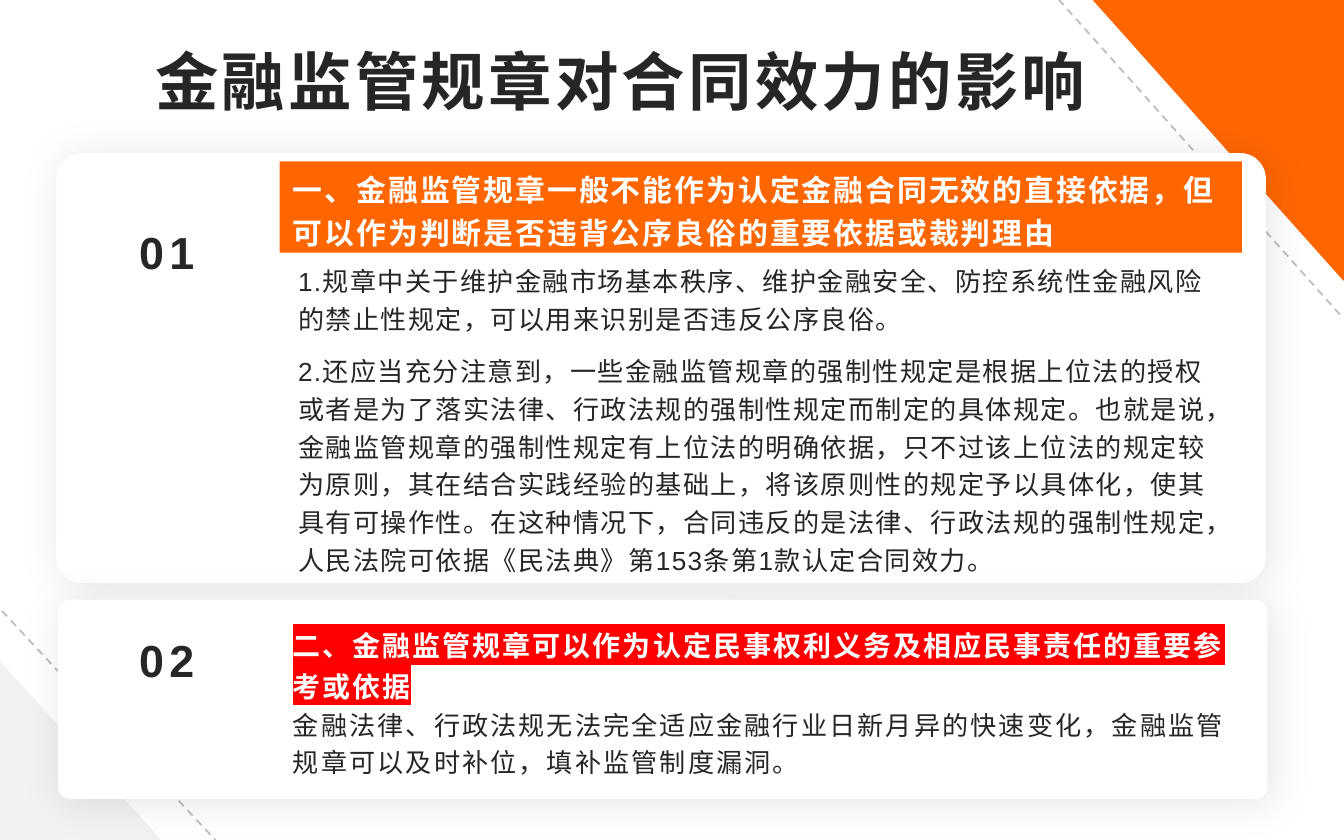
from lxml import etree
from pptx import Presentation, util as u
from pptx.dml import color
from pptx.enum import dml, shapes, text
from pptx.oxml import ns

ORANGE = color.RGBColor(0xFF, 0x66, 0x00)
RED = color.RGBColor(0xFF, 0x00, 0x00)
WHITE = color.RGBColor(0xFF, 0xFF, 0xFF)
BLACK = color.RGBColor(0x00, 0x00, 0x00)
INK = color.RGBColor(0x26, 0x26, 0x26)
PALE = color.RGBColor(0xF2, 0xF2, 0xF2)
GREY = color.RGBColor(0xBF, 0xBF, 0xBF)
CJK = "Noto Sans CJK SC"
LEFT, CENTER = text.PP_ALIGN.LEFT, text.PP_ALIGN.CENTER
TOP, MIDDLE = text.MSO_ANCHOR.TOP, text.MSO_ANCHOR.MIDDLE
SHAPE = shapes.MSO_SHAPE

TITLE = "金融监管规章对合同效力的影响"
HEADING_1 = "一、金融监管规章一般不能作为认定金融合同无效的直接依据，但可以作为判断是否违背公序良俗的重要依据或裁判理由"
POINTS_1 = [
    "1.规章中关于维护金融市场基本秩序、维护金融安全、防控系统性金融风险的禁止性规定，可以用来识别是否违反公序良俗。",
    "2.还应当充分注意到，一些金融监管规章的强制性规定是根据上位法的授权或者是为了落实法律、行政法规的强制性规定而制定的具体规定。"
    "也就是说，金融监管规章的强制性规定有上位法的明确依据，只不过该上位法的规定较为原则，其在结合实践经验的基础上，"
    "将该原则性的规定予以具体化，使其具有可操作性。在这种情况下，合同违反的是法律、行政法规的强制性规定，"
    "人民法院可依据《民法典》第153条第1款认定合同效力。",
]
HEADING_2 = "二、金融监管规章可以作为认定民事权利义务及相应民事责任的重要参考或依据"
BODY_2 = "金融法律、行政法规无法完全适应金融行业日新月异的快速变化，金融监管规章可以及时补位，填补监管制度漏洞。"


def write(p, string, size=14, rgb=INK, bold=False, font="Arial", spacing=0.7,
          highlight=None, align=LEFT, line=None, after=0):
    """Format a paragraph and add one run of text to it."""
    p.alignment, p.line_spacing, p.space_after = align, line, u.Pt(after)
    r = p.add_run()
    r.text = string
    r.font.size, r.font.bold, r.font.name = u.Pt(size), bold, font
    r.font.color.rgb = rgb
    rpr = r.font._element
    rpr.set("spc", str(round(spacing * 100)))
    ea = etree.Element(ns.qn("a:ea"), typeface=CJK)
    rpr.find(ns.qn("a:latin")).addnext(ea)
    if highlight is not None:
        mark = etree.Element(ns.qn("a:highlight"))
        etree.SubElement(mark, ns.qn("a:srgbClr"), val=str(highlight))
        rpr.find(ns.qn("a:solidFill")).addnext(mark)


class Deck:
    """Slide builder that holds the shared style and the current slide."""

    def __init__(self, width, height):
        self.prs = Presentation()
        self.prs.slide_width, self.prs.slide_height = u.Pt(width), u.Pt(height)
        self.s = self.prs.slides.add_slide(self.prs.slide_layouts[6])

    def dashed(self, *ends):
        c = self.s.shapes.add_connector(shapes.MSO_CONNECTOR.STRAIGHT, *map(u.Pt, ends))
        c.line.color.rgb, c.line.width = GREY, u.Pt(1)
        c.line.dash_style = dml.MSO_LINE.DASH
        etree.SubElement(c._element.spPr, ns.qn("a:effectLst"))

    def polygon(self, points, fill):
        start, *rest = [(u.Pt(x), u.Pt(y)) for x, y in points]
        fb = self.s.shapes.build_freeform(*start)
        fb.add_line_segments(rest, close=True)
        sp = self.paint(fb.convert_to_shape(), fill)
        sp.line.color.rgb, sp.line.width = fill, u.Pt(1)

    def paint(self, sp, fill):
        sp.shadow.inherit = False
        sp.fill.solid()
        sp.fill.fore_color.rgb = fill
        sp.line.fill.background()
        return sp

    def shape(self, kind, box, fill):
        return self.paint(self.s.shapes.add_shape(kind, *map(u.Pt, box)), fill)

    def card(self, *box):
        sp = self.shape(SHAPE.ROUNDED_RECTANGLE, box, WHITE)
        sp.adjustments[0] = 0.06
        effects = sp._element.spPr.find(ns.qn("a:effectLst"))
        shadow = etree.SubElement(effects, ns.qn("a:outerShdw"), blurRad=str(u.Pt(23)),
                                  dist=str(u.Pt(3)), dir=str(45 * 60000), rotWithShape="0")
        rgb = etree.SubElement(shadow, ns.qn("a:srgbClr"), val=str(BLACK))
        etree.SubElement(rgb, ns.qn("a:alpha"), val="10000")

    def text(self, box, paragraphs, anchor=TOP, inset=(7.2, 3.6), fill=None):
        if fill is None:
            sp = self.s.shapes.add_textbox(*map(u.Pt, box))
        else:
            sp = self.shape(SHAPE.RECTANGLE, box, fill)
        tf = sp.text_frame
        tf.word_wrap, tf.vertical_anchor = True, anchor
        tf.margin_left = tf.margin_right = u.Pt(inset[0])
        tf.margin_top = tf.margin_bottom = u.Pt(inset[1])
        for i, (string, fmt) in enumerate(paragraphs):
            write(tf.add_paragraph() if i else tf.paragraphs[0], string, **fmt)

    def number(self, top, string):
        fmt = dict(size=24, bold=True, spacing=3, align=CENTER)
        self.text((50.4, top, 77.8, 82), [(string, fmt)], MIDDLE)


def main():
    d = Deck(720, 450)
    d.dashed(717.8, 168.5, 567.4, 0)
    d.polygon([(586, 0), (720, 0), (720, 150)], ORANGE)
    d.shape(SHAPE.RIGHT_TRIANGLE, (0, 354.2, 86.4, 95.8), PALE)
    d.dashed(117.4, 452.2, 0.7, 326.9)
    d.text((8.6, 20.9, 648, 44.6),
           [(TITLE, dict(size=34, bold=True, font=CJK, spacing=1.8, align=CENTER))],
           inset=(3.6, 1.44))

    heading = dict(rgb=WHITE, bold=True, spacing=1.1, line=1.2)
    d.card(30.2, 82, 648, 230.4)
    d.number(93.6, "01")
    d.text((152.6, 135.4, 508.3, 49.7), [(t, dict(line=1.2, after=8)) for t in POINTS_1])
    d.text((149.8, 86.4, 515.5, 49), [(HEADING_1, dict(heading, size=16))], MIDDLE, fill=ORANGE)

    d.card(31, 321.3, 648, 106.6)
    d.number(312.5, "02")
    d.text((149.8, 350.6, 515.5, 49),
           [(HEADING_2, dict(heading, size=15, highlight=RED)),
            (BODY_2, dict(spacing=1.1, line=1.2))], MIDDLE)
    d.prs.save("out.pptx")


if __name__ == "__main__":
    main()
